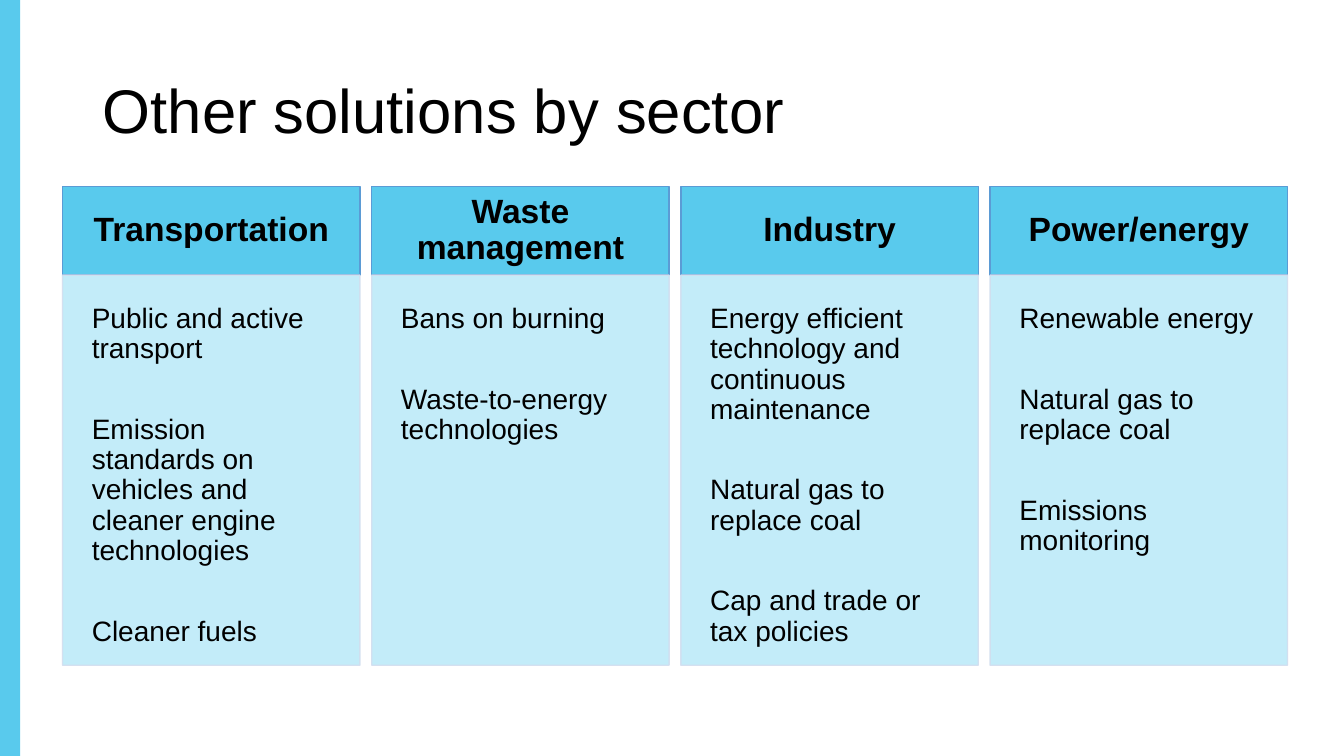
from dataclasses import dataclass

from lxml import etree
from pptx import Presentation
from pptx.dml.color import RGBColor
from pptx.enum.shapes import MSO_SHAPE
from pptx.enum.text import MSO_ANCHOR, MSO_AUTO_SIZE, PP_ALIGN
from pptx.oxml.ns import qn
from pptx.util import Emu, Pt

RECT = MSO_SHAPE.RECTANGLE
TOP, MIDDLE = MSO_ANCHOR.TOP, MSO_ANCHOR.MIDDLE
LEFT, CENTER = PP_ALIGN.LEFT, PP_ALIGN.CENTER
PX = 9144  # EMU per px, 100 px to the inch
WIDE, HIGH = 1333, 750


@dataclass(frozen=True)
class Theme:
    font: str = "Arial"
    ink: str = "000000"
    accent: str = "59CAED"
    edge: str = "5B9BD5"
    pale: str = "C3ECF9"
    mist: str = "D2DEEF"
    title: int = 44
    head: int = 24
    body: int = 20
    gap: int = 36


THEME = Theme()

SECTORS = [
    ("Transportation", [
        "Public and active transport",
        "Emission standards on vehicles and cleaner engine technologies",
        "Cleaner fuels",
    ]),
    ("Waste management", [
        "Bans on burning",
        "Waste-to-energy technologies",
    ]),
    ("Industry", [
        "Energy efficient technology and continuous maintenance",
        "Natural gas to replace coal",
        "Cap and trade or tax policies",
    ]),
    ("Power/energy", [
        "Renewable energy",
        "Natural gas to replace coal",
        "Emissions monitoring",
    ]),
]


def px(*sizes):
    return [Emu(round(size * PX)) for size in sizes]


def add_box(slide, area, fill, line=None, alpha=100):
    """Add a flat rectangle; alpha is the opacity of its outline in percent."""
    box = slide.shapes.add_shape(RECT, *px(*area))
    box.shadow.inherit = False
    box.fill.solid()
    box.fill.fore_color.rgb = RGBColor.from_string(fill)
    if line is None:
        box.line.fill.background()
        return box
    box.line.color.rgb = RGBColor.from_string(line)
    box.line.width = Pt(1)
    if alpha < 100:
        color = box.line._get_or_add_ln().find(".//" + qn("a:srgbClr"))
        etree.SubElement(color, qn("a:alpha"), val=str(alpha * 1000))
    return box


def set_text(shape, lines, size, align=LEFT, anchor=TOP, bold=False):
    frame = shape.text_frame
    frame.word_wrap = True
    frame.auto_size = MSO_AUTO_SIZE.NONE
    frame.vertical_anchor = anchor
    for i, line in enumerate(lines):
        para = frame.add_paragraph() if i else frame.paragraphs[0]
        para.alignment = align
        para.line_spacing = 0.9
        para.space_before = Pt(THEME.gap if i else 0)
        run = para.add_run()
        run.text = line
        run.font.name = THEME.font
        run.font.size = Pt(size)
        run.font.bold = bold
        run.font.color.rgb = RGBColor.from_string(THEME.ink)


def set_inset(shape, inset):
    frame = shape.text_frame
    frame.margin_left, frame.margin_top = px(inset, inset)
    frame.margin_right, frame.margin_bottom = px(inset, inset)


def add_title(slide, text):
    title = slide.shapes.title
    title.left, title.top, title.width, title.height = px(92, 40, 1150, 145)
    set_text(title, [text], THEME.title, anchor=MIDDLE)


def add_card(slide, left, name, items):
    head = add_box(slide, (left, 185, 295, 88), THEME.accent, THEME.edge)
    set_inset(head, 23)
    set_text(head, [name], THEME.head, CENTER, MIDDLE, bold=True)
    body = add_box(slide, (left, 273, 295, 387), THEME.pale, THEME.mist, 90)
    set_inset(body, 29)
    set_text(body, items, THEME.body)


def main():
    deck = Presentation()
    deck.slide_width, deck.slide_height = px(WIDE, HIGH)
    slide = deck.slides.add_slide(deck.slide_layouts.get_by_name("Title Only"))
    add_box(slide, (0, 0, 20, HIGH), THEME.accent)
    add_title(slide, "Other solutions by sector")
    first, last = 62, 982
    step = (last - first) / (len(SECTORS) - 1)
    for i, (name, items) in enumerate(SECTORS):
        add_card(slide, first + i * step, name, items)
    deck.save("out.pptx")


if __name__ == "__main__":
    main()
